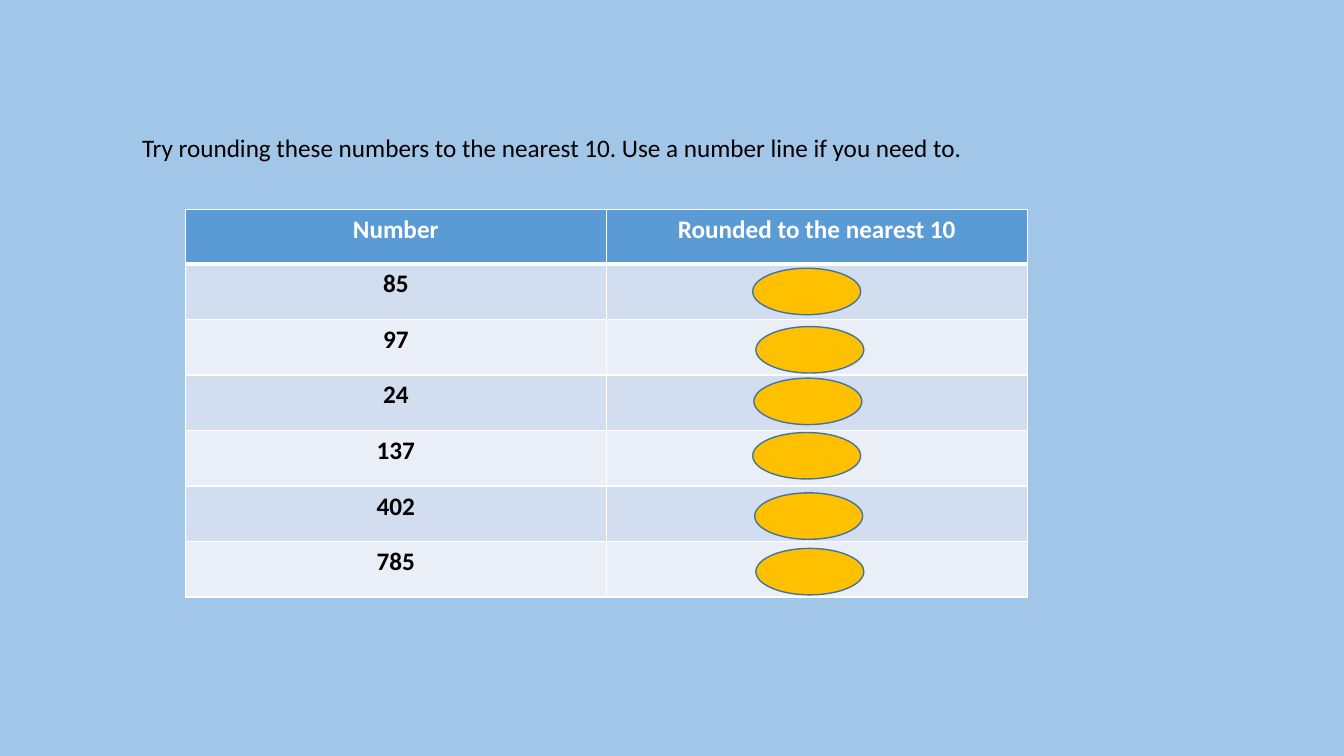
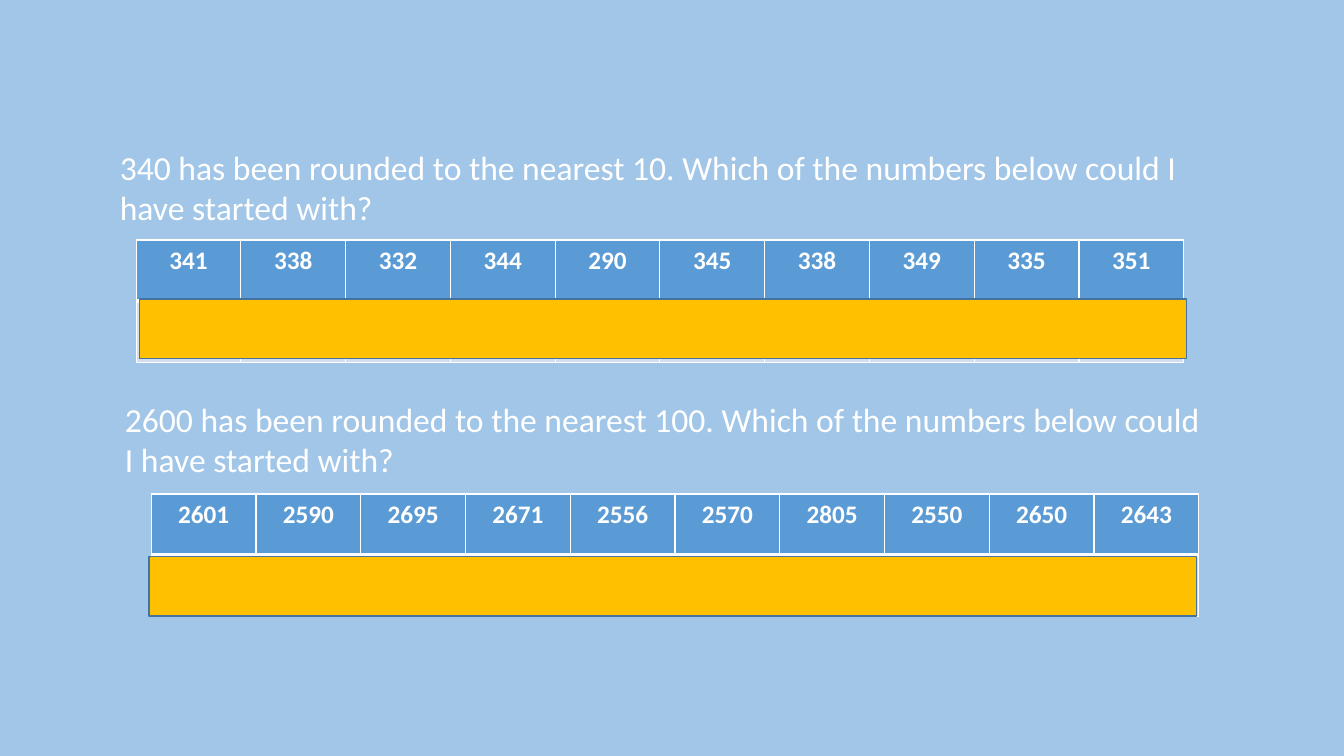
from dataclasses import dataclass

from lxml.etree import SubElement
from pptx import Presentation
from pptx.dml.color import RGBColor as RGB
from pptx.enum.shapes import MSO_SHAPE as Shape
from pptx.enum.text import MSO_AUTO_SIZE as AutoSize, PP_ALIGN as Align
from pptx.oxml.ns import qn
from pptx.util import Cm, Pt


@dataclass(frozen=True)
class Theme:
    font: str = "Calibri"
    body: int = 18
    question: int = 24
    thin: int = 1
    thick: int = 3
    background: RGB = RGB(0xA2, 0xC6, 0xE7)
    header: RGB = RGB(0x5B, 0x9B, 0xD5)
    bands: tuple = (RGB(0xD2, 0xDE, 0xEF), RGB(0xEA, 0xEF, 0xF7))
    cover: RGB = RGB(0xFF, 0xC0, 0x00)
    outline: RGB = RGB(0x43, 0x73, 0x9E)
    white: RGB = RGB(0xFF, 0xFF, 0xFF)
    black: RGB = RGB(0x00, 0x00, 0x00)


THEME = Theme()

ROUNDING_HEAD = ["Number", "Rounded to the nearest 10"]
ROUNDING_ROWS = [
    ("85", 3.69, 0.11),
    ("97", 3.77, 0.18),
    ("24", 3.72, 0.08),
    ("137", 3.69, 0.05),
    ("402", 3.74, 0.17),
    ("785", 3.77, 0.17),
]


def add_slide(prs):
    slide = prs.slides.add_slide(prs.slide_layouts[6])
    fill = slide.background.fill
    fill.solid()
    fill.fore_color.rgb = THEME.background
    return slide


def set_font(p, size, color, bold=False):
    p.font.name = THEME.font
    p.font.size = Pt(size)
    p.font.bold = bold
    p.font.color.rgb = color


def add_text(slide, box, text, size, color):
    tf = slide.shapes.add_textbox(*map(Cm, box)).text_frame
    tf.word_wrap = True
    tf.auto_size = AutoSize.SHAPE_TO_FIT_TEXT
    p = tf.paragraphs[0]
    p.text = text
    set_font(p, size, color)


def add_cover(slide, shape, box):
    sp = slide.shapes.add_shape(shape, *map(Cm, box))
    sp.shadow.inherit = False
    sp.fill.solid()
    sp.fill.fore_color.rgb = THEME.cover
    sp.line.color.rgb = THEME.outline
    sp.line.width = Pt(THEME.thin)


def set_borders(cell, top, bottom):
    tc_pr = cell._tc.get_or_add_tcPr()
    sides = {"L": THEME.thin, "R": THEME.thin, "T": top, "B": bottom}
    for side, width in sides.items():
        ln = SubElement(tc_pr, qn(f"a:ln{side}"), w=str(Pt(width)))
        fill = SubElement(ln, qn("a:solidFill"))
        SubElement(fill, qn("a:srgbClr"), val=str(THEME.white))


def add_grid(slide, left, top, rows, col_width, row_heights):
    cols = len(rows[0])
    size = (cols * col_width, sum(row_heights))
    frame = slide.shapes.add_table(len(rows), cols, *map(Cm, (left, top, *size)))
    table = frame.table
    table.first_row = table.horz_banding = False
    for col in table.columns:
        col.width = Cm(col_width)
    for i, (values, height) in enumerate(zip(rows, row_heights)):
        table.rows[i].height = Cm(height)
        is_header = i == 0
        for j, value in enumerate(values):
            cell = table.cell(i, j)
            set_borders(
                cell,
                top=THEME.thick if i == 1 else THEME.thin,
                bottom=THEME.thick if is_header else THEME.thin,
            )
            cell.fill.solid()
            cell.fill.fore_color.rgb = THEME.header if is_header else THEME.bands[(i - 1) % 2]
            p = cell.text_frame.paragraphs[0]
            p.text = value
            p.alignment = Align.CENTER
            set_font(p, THEME.body, THEME.white if is_header else THEME.black, bold=True)


def add_rounding_table(slide, left, top):
    col_width, head_height, row_height = 10.61, 1.37, 1.4
    rows = [ROUNDING_HEAD] + [[number, ""] for number, _, _ in ROUNDING_ROWS]
    heights = [head_height] + [row_height] * len(ROUNDING_ROWS)
    add_grid(slide, left, top, rows, col_width, heights)
    for i, (_, dx, dy) in enumerate(ROUNDING_ROWS):
        x = left + col_width + dx
        y = top + head_height + i * row_height + dy
        add_cover(slide, Shape.OVAL, (x, y, 2.72, 1.17))


def add_question(slide, left, top, text, numbers, grid_offset, cover_offset):
    col_width, row_height = 2.64, 1.54
    add_text(slide, (left, top, 27.88, 2.31), text, THEME.question, THEME.white)
    x, y = left + grid_offset[0], top + grid_offset[1]
    rows = [numbers.split(), [""] * len(numbers.split())]
    add_grid(slide, x, y, rows, col_width, [row_height] * 2)
    cover = (x + cover_offset[0], y + cover_offset[1], len(rows[0]) * col_width, 1.5)
    add_cover(slide, Shape.RECTANGLE, cover)


def build_rounding_slide(prs):
    slide = add_slide(prs)
    add_text(
        slide, (3.33, 3.2, 21.62, 1.02),
        "Try rounding these numbers to the nearest 10. Use a number line if you need to.",
        THEME.body, THEME.black,
    )
    add_rounding_table(slide, 4.67, 5.28)


def build_reverse_slide(prs):
    slide = add_slide(prs)
    add_question(
        slide, 2.77, 3.58,
        "340 has been rounded to the nearest 10. "
        "Which of the numbers below could I have started with?",
        "341 338 332 344 290 345 338 349 335 351",
        grid_offset=(0.66, 2.47), cover_offset=(0.08, 1.49),
    )
    add_question(
        slide, 2.9, 9.93,
        "2600 has been rounded to the nearest 100. "
        "Which of the numbers below could I have started with?",
        "2601 2590 2695 2671 2556 2570 2805 2550 2650 2643",
        grid_offset=(0.91, 2.52), cover_offset=(-0.05, 1.57),
    )


def main():
    prs = Presentation()
    prs.slide_width, prs.slide_height = Cm(33.87), Cm(19.05)
    build_rounding_slide(prs)
    build_reverse_slide(prs)
    prs.save("out.pptx")


if __name__ == "__main__":
    main()
